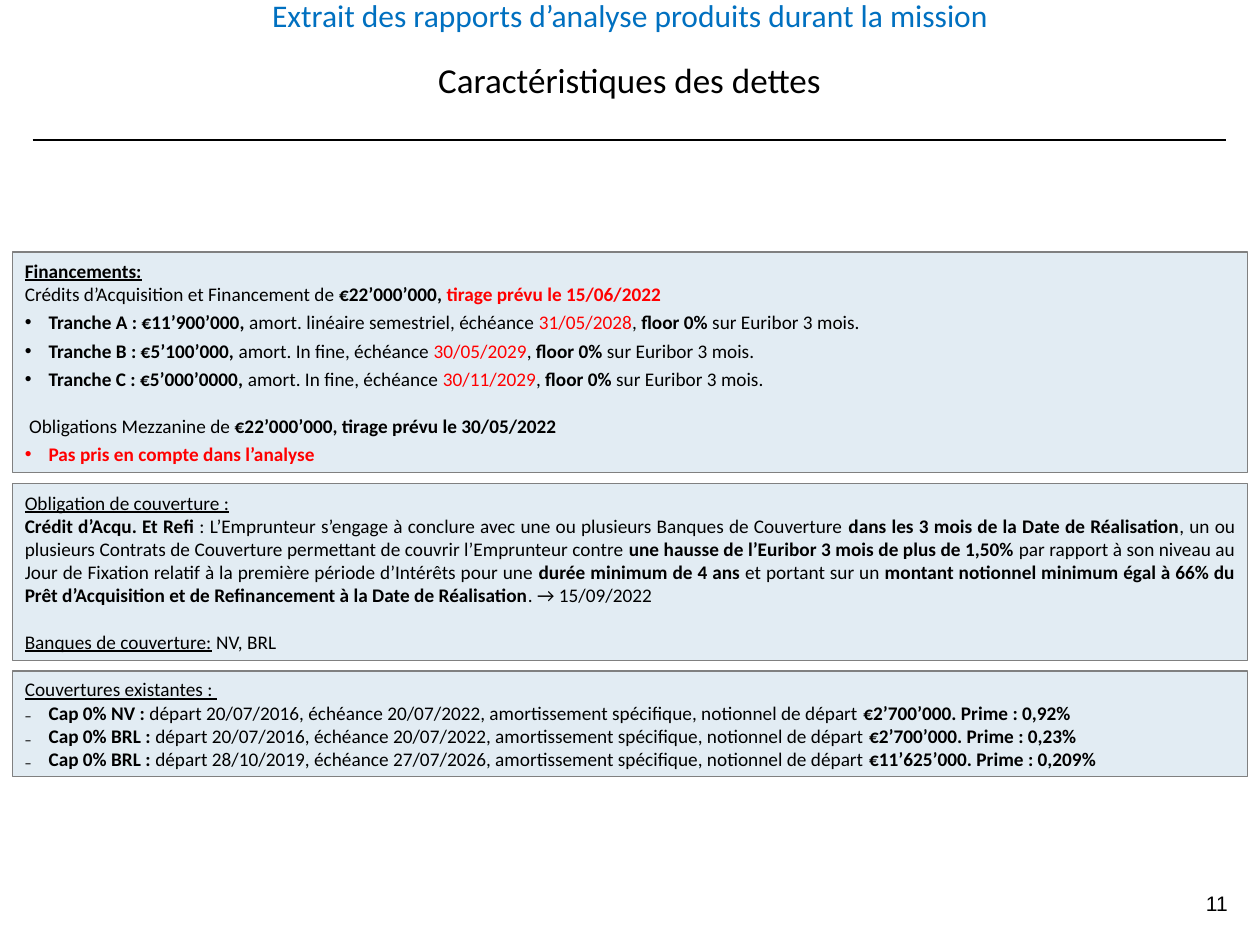
from lxml import etree
from pptx import Presentation
from pptx import util as u
from pptx.dml.color import RGBColor
from pptx.enum import shapes, text
from pptx.oxml.ns import qn

COLORS = {"ink": "000000", "red": "FF0000", "blue": "0070C0",
          "panel": "E2ECF3", "border": "808080"}
ALIGN = text.PP_ALIGN
INDENT = u.Cm(0.48)
LINE = 13.4  # height of one 11-point line, in points


def add_span(para, words, size, style="", color="ink", font="Calibri"):
    """Add a run; style may hold b (bold) and u (underlined)."""
    span = para.add_run()
    span.text = words
    span.font.name = font
    span.font.size = u.Pt(size)
    span.font.bold = "b" in style
    span.font.underline = "u" in style
    span.font.color.rgb = RGBColor.from_string(COLORS[color])


def add_bullet(para, mark):
    props = para._p.get_or_add_pPr()
    props.set("marL", str(INDENT))
    props.set("indent", str(-INDENT))
    etree.SubElement(props, qn("a:buFont")).set("typeface", "Arial")
    etree.SubElement(props, qn("a:buChar")).set("char", mark)


deck = Presentation()
deck.slide_width, deck.slide_height = u.Cm(25.4), u.Cm(19.05)
page = deck.slides.add_slide(deck.slide_layouts[5])

title = page.shapes.title
title.left, title.top, title.width, title.height = u.Cm(4.32), u.Cm(1.04), u.Cm(16.74), u.Cm(1.12)
para = title.text_frame.paragraphs[0]
para.alignment = ALIGN.CENTER
add_span(para, "Caractéristiques des dettes", 20)

rule = page.shapes.add_connector(shapes.MSO_CONNECTOR.STRAIGHT,
                                 u.Cm(0.66), u.Cm(2.82), u.Cm(24.71), u.Cm(2.82))
rule.line.color.rgb = RGBColor.from_string(COLORS["ink"])
rule.line.width = u.Pt(0.75)
etree.SubElement(rule._element.spPr, qn("a:effectLst"))

labels = [
    ((4.78, -0.2, 15.85, 1.02), ALIGN.CENTER,
     ("Extrait des rapports d’analyse produits durant la mission", 18, "", "blue")),
    ((19.08, 17.75, 5.92, 0.91), ALIGN.RIGHT, ("11", 12, "", "ink", "Arial")),
]
for place, align, words in labels:
    box = page.shapes.add_textbox(*map(u.Cm, place))
    box.text_frame.word_wrap = True
    box.text_frame.vertical_anchor = text.MSO_ANCHOR.MIDDLE
    para = box.text_frame.paragraphs[0]
    para.alignment = align
    add_span(para, *words)

# Each paragraph: bullet mark, space before in points, runs
tranches = [
    ("•", 3, [(f"Tranche {name} : {amount}, ", "b"),
              (f"amort. {mode}, échéance ",), (due, "", "red"), (", ",),
              ("floor 0%", "b"), (" sur Euribor 3 mois.",)])
    for name, amount, mode, due in [
        ("A", "€11’900’000", "linéaire semestriel", "31/05/2028"),
        ("B", "€5’100’000", "In fine", "30/05/2029"),
        ("C", "€5’000’0000", "In fine", "30/11/2029")]
]
financing = [
    ("", 0, [("Financements:", "bu")]),
    ("", 0, [("Crédits d’Acquisition et Financement de ",), ("€22’000’000, ", "b"),
             ("tirage prévu le 15/06/2022", "b", "red")]),
    *tranches,
    ("", LINE, [(" Obligations Mezzanine de ",),
                ("€22’000’000, tirage prévu le 30/05/2022", "b")]),
    ("•", 3, [("Pas pris en compte dans l’analyse", "b", "red")]),
]
obligation = [
    ("", 0, [("Obligation de couverture :", "u")]),
    ("", 0, [
        ("Crédit d’Acqu. Et Refi ", "b"),
        (": L’Emprunteur s’engage à conclure avec une ou plusieurs Banques de Couverture ",),
        ("dans les 3 mois de la Date de Réalisation", "b"),
        (", un ou plusieurs Contrats de Couverture permettant de couvrir l’Emprunteur contre ",),
        ("une hausse de l’Euribor 3 mois de plus de 1,50% ", "b"),
        ("par rapport à son niveau au Jour de Fixation relatif à la première période "
         "d’Intérêts pour une ",),
        ("durée minimum de 4 ans ", "b"),
        ("et portant sur un ",),
        ("montant notionnel minimum égal à 66% du Prêt d’Acquisition et de Refinancement "
         "à la Date de Réalisation", "b"),
        (". → 15/09/2022",)]),
    ("", LINE, [("Banques de couverture:", "u"), (" NV, BRL",)]),
]
hedges = [("", 0, [("Couvertures existantes : ", "u")])] + [
    ("₋", 0, [(f"Cap 0% {bank} :", "b"),
              (f" départ {start}, échéance {end}, amortissement spécifique, "
               "notionnel de départ ",),
              (f"{amount}. Prime : {premium}", "b")])
    for bank, start, end, amount, premium in [
        ("NV", "20/07/2016", "20/07/2022", "€2’700’000", "0,92%"),
        ("BRL", "20/07/2016", "20/07/2022", "€2’700’000", "0,23%"),
        ("BRL", "28/10/2019", "27/07/2026", "€11’625’000", "0,209%")]
]

top, gap = 5.08, 0.22
for height, content in [(4.45, financing), (3.56, obligation), (2.13, hedges)]:
    panel = page.shapes.add_shape(shapes.MSO_SHAPE.RECTANGLE, u.Cm(0.25), u.Cm(top),
                                  u.Cm(24.9), u.Cm(height))
    panel.shadow.inherit = False
    panel.fill.solid()
    panel.fill.fore_color.rgb = RGBColor.from_string(COLORS["panel"])
    panel.line.color.rgb = RGBColor.from_string(COLORS["border"])
    panel.line.width = u.Pt(0.75)
    frame = panel.text_frame
    frame.word_wrap = True
    frame.vertical_anchor = text.MSO_ANCHOR.MIDDLE
    for index, (mark, space, spans) in enumerate(content):
        para = frame.add_paragraph() if index else frame.paragraphs[0]
        para.alignment = ALIGN.JUSTIFY
        para.space_before = u.Pt(space)
        if mark:
            add_bullet(para, mark)
        for words, *look in spans:
            add_span(para, words, 11, *look)
    top += height + gap

deck.save("out.pptx")
